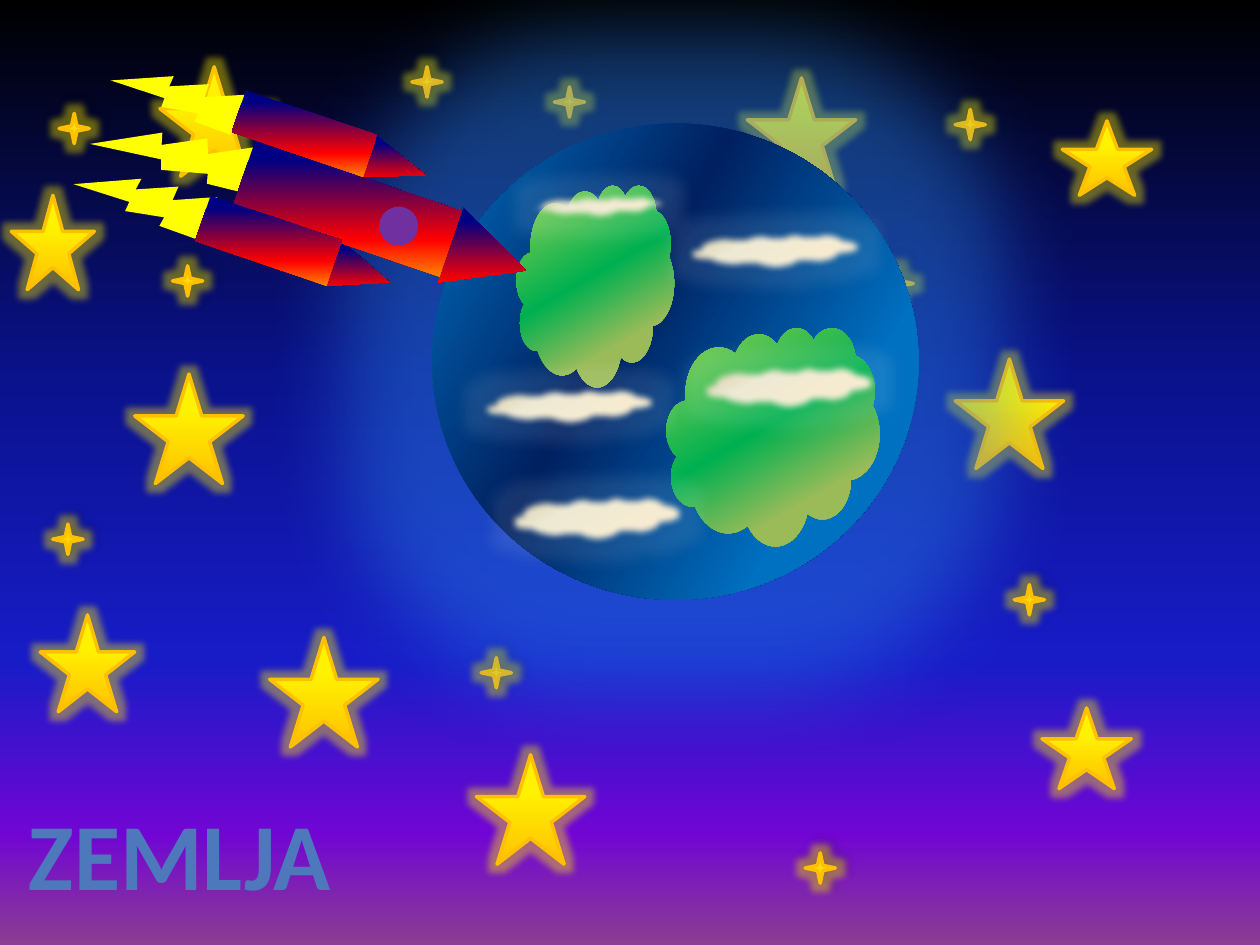
from lxml.etree import SubElement
from pptx import Presentation
from pptx.dml.color import RGBColor
from pptx.enum.shapes import MSO_SHAPE as SHAPE
from pptx.oxml.ns import qn
from pptx.util import Pt

COLORS = {
    "star_line": "FFC000", "star_glow": "FFF200", "earth_glow": "2A8CED",
    "haze": "FFFFFF", "shadow": "000000", "flame": "FFFF00", "window": "7030A0",
}
# name: (angle, [(position in percent, colour), ...])
GRADIENTS = {
    "sky": (90, [(0, "000000"), (40, "0A128C"), (70, "181CC7"), (88, "7005D4"), (100, "8C3D91")]),
    "star": (90, [(33, "FFF200"), (99, "FFC000")]),
    "sparkle": (90, [(9, "FFF200"), (100, "FFC000")]),
    "title": (90, [(0, "7494C9"), (49, "4D79BC"), (50, "346AAA"), (92, "325F94"), (100, "315D91")]),
    "ocean": (30, [(0, "0070C0"), (40, "002060"), (77, "0070C0")]),
    "land": (60, [(0, "92D050"), (46, "00B050"), (75, "9BBB59")]),
    "cloud": (240, [(0, "FFEFD1"), (65, "F0EBD5"), (100, "D1C39F")]),
    "rocket": (90, [(14, "000082"), (73, "FF0000"), (100, "FF8200")]),
}

# Boxes are left, top, width, height
BIG = (62, 62.6)
STARS = [
    (91.4, 38.2, *BIG), (6.5, 111.6, 47.5, 54), (77, 213.8, *BIG), (154.1, 364.3, *BIG),
    (427, 44.6, *BIG), (23, 351.4, 54, 55.4), (272.2, 431.3, *BIG),
    (595.4, 404.6, 51.1, 46.1), (545.8, 205.2, *BIG), (607, 69.1, 51.1, 42.5),
]
SPARKLE_SIZE = 17.3
SPARKLES = [
    (98.6, 151.9), (33.8, 64.8), (316.8, 49.7), (235.4, 38.2), (30.2, 299.5),
    (460.1, 487.4), (275, 375.8), (545.8, 62.6), (579.6, 334.1), (504.7, 153.4),
]
TITLE, TITLE_BOX = "ZEMLJA", (9.4, 451.4, 270, 72.7)
EARTH = (247, 70.6, 277.9, 272.2)
LANDS = [(295.2, 105.8, 90, 115.2), (380.9, 187.2, 121.7, 124.6)]
CLOUDS = [
    (285.8, 280.8, 109.4, 31), (395.3, 206.6, 109.4, 29.5), (298.1, 108.7, 87.8, 18.7),
    (387.4, 130.3, 109.4, 25.9), (270, 219.6, 109.4, 25.2),
]
FLAMES = [  # box, rotation
    ((56.2, 79.9, 61.2, 67.7), 142.9),
    ((78.5, 20.9, 54.7, 67.7), 140.6),
    ((77, 41.8, 56.9, 92.9), 127.8),
]
ROCKET_TILT = 108.8
NOSES = [(256.3, 124.6, 45.4, 45.4), (193, 139, 27.4, 33.8), (214.6, 77.8, 25.2, 33.8)]
BODIES = [(178.6, 56.9, 39.6, 124.6), (139.7, 97.9, 27.4, 79.2), (161.3, 36.7, 25.2, 79.2)]
WINDOW = (216.7, 118.1, 22.3, 22.3)


def set_gradient(fill, root, name):
    """Give fill, whose XML lies under root, the named gradient in slide direction."""
    angle, stops = GRADIENTS[name]
    fill.gradient()
    grad = root.find(".//" + qn("a:gradFill"))
    for child in list(grad):
        grad.remove(child)
    grad.set("rotWithShape", "0")
    gs_list = SubElement(grad, qn("a:gsLst"))
    for pos, color in stops:
        gs = SubElement(gs_list, qn("a:gs"), pos=str(pos * 1000))
        SubElement(gs, qn("a:srgbClr"), val=color)
    SubElement(grad, qn("a:lin"), ang=str(angle * 60000), scaled="0")


def add_effect(s, tag, color=None, alpha=100, **attrs):
    effects = s._element.spPr.find(qn("a:effectLst"))
    effect = SubElement(effects, qn(tag), **{k: str(int(v)) for k, v in attrs.items()})
    if color:
        clr = SubElement(effect, qn("a:srgbClr"), val=COLORS[color])
        SubElement(clr, qn("a:alpha"), val=str(alpha * 1000))


def add_part(group, kind, box, gradient=None, color=None, rotation=0):
    s = group.shapes.add_shape(kind, *map(Pt, box))
    s.rotation = rotation
    s.shadow.inherit = False
    s.line.fill.background()
    if gradient:
        set_gradient(s.fill, s._element.spPr, gradient)
    else:
        s.fill.solid()
        s.fill.fore_color.rgb = RGBColor.from_string(COLORS[color])
    return s


def add_star(group, kind, box, gradient):
    s = add_part(group, kind, box, gradient)
    s.line.color.rgb = RGBColor.from_string(COLORS["star_line"])
    s.line.width = Pt(2)
    add_effect(s, "a:glow", "star_glow", 40, rad=Pt(8))
    return s


prs = Presentation()
prs.slide_width, prs.slide_height = Pt(720), Pt(540)
slide = prs.slides.add_slide(prs.slide_layouts[6])
set_gradient(slide.background.fill, slide._element, "sky")

sky = slide.shapes.add_group_shape()
for box in STARS:
    add_star(sky, SHAPE.STAR_5_POINT, box, "star")
for left, top in SPARKLES:
    s = add_star(sky, SHAPE.STAR_4_POINT, (left, top, SPARKLE_SIZE, SPARKLE_SIZE), "sparkle")
    add_effect(s, "a:outerShdw", "shadow", 40, blurRad=Pt(4), dist=Pt(3), dir=315 * 60000)

tf = slide.shapes.add_textbox(*map(Pt, TITLE_BOX)).text_frame
tf.word_wrap = True
p = tf.paragraphs[0]
r = p.add_run()
r.text = TITLE
r.font.name, r.font.size, r.font.bold = "Calibri", Pt(54), True
set_gradient(r.font.fill, r._r, "title")

earth = slide.shapes.add_group_shape()
globe = add_part(earth, SHAPE.OVAL, EARTH, "ocean")
add_effect(globe, "a:glow", "earth_glow", 40, rad=Pt(100))
for box in LANDS:
    add_part(earth, SHAPE.CLOUD, box, "land")
for box in CLOUDS:
    s = add_part(earth, SHAPE.CLOUD, box, "cloud")
    add_effect(s, "a:glow", "haze", 10, rad=Pt(18))
    add_effect(s, "a:softEdge", rad=Pt(4))

rocket = slide.shapes.add_group_shape()
for box, rotation in FLAMES:
    add_part(rocket, SHAPE.LIGHTNING_BOLT, box, color="flame", rotation=rotation)
for kind, boxes in ((SHAPE.ISOSCELES_TRIANGLE, NOSES), (SHAPE.RECTANGLE, BODIES)):
    for box in boxes:
        add_part(rocket, kind, box, "rocket", rotation=ROCKET_TILT)
add_part(rocket, SHAPE.OVAL, WINDOW, color="window", rotation=ROCKET_TILT)

prs.save("out.pptx")
